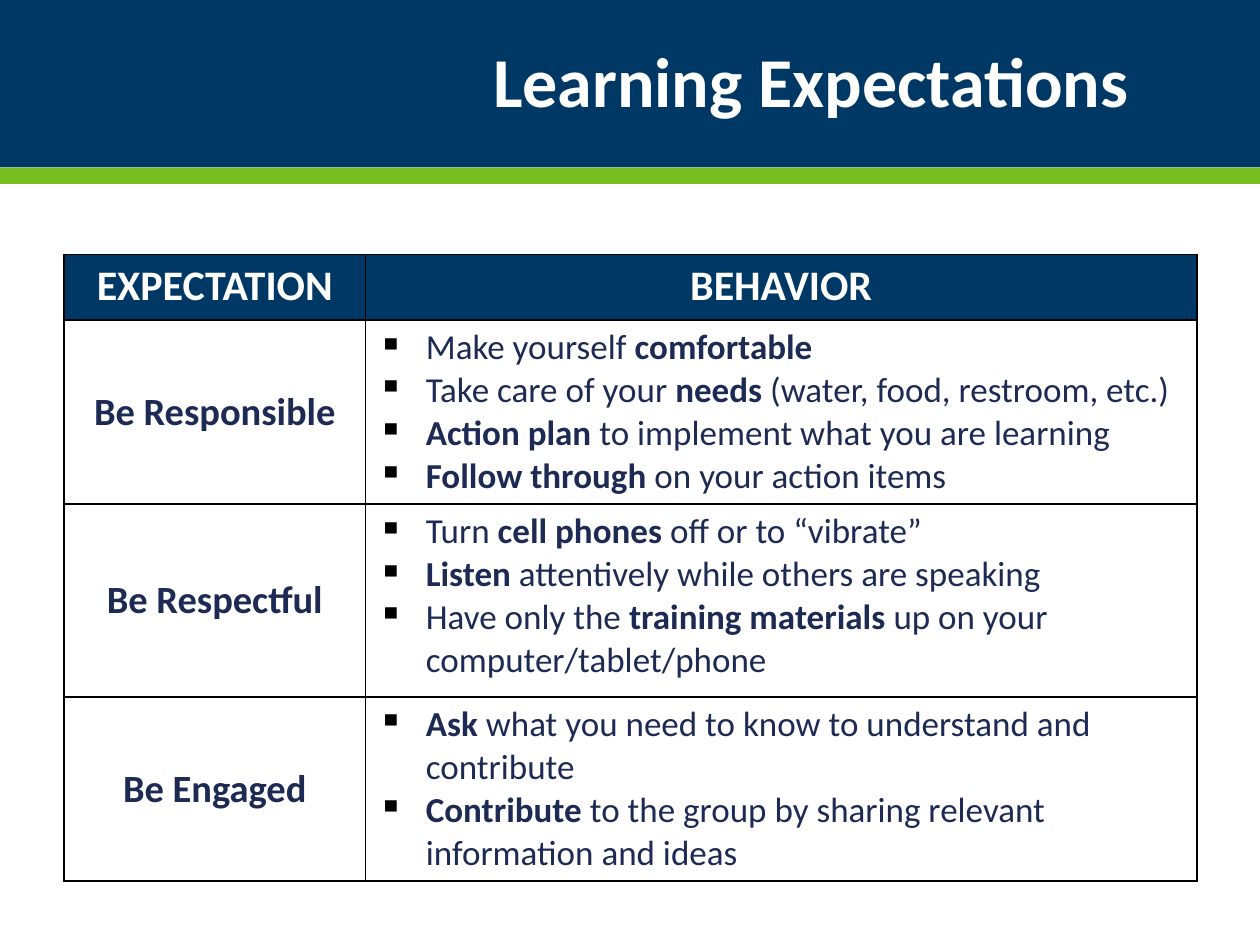
from dataclasses import dataclass
from lxml.etree import SubElement as Sub
from pptx import Presentation
from pptx.dml.color import RGBColor as Rgb
from pptx.enum.shapes import MSO_SHAPE as Shape
from pptx.enum.text import MSO_ANCHOR as Anchor, PP_ALIGN as Align
from pptx.oxml.ns import qn
from pptx.util import Emu, Pt

SCALE = 9144


def px(n):
    return Emu(n * SCALE)


@dataclass(frozen=True)
class Theme:
    font: str = "Calibri"
    navy: str = "003865"
    green: str = "78BE21"
    ink: str = "1D2A53"
    white: str = "FFFFFF"
    black: str = "000000"
    title: int = 40
    head: int = 24
    label: int = 22
    body: int = 20


class Deck:
    def __init__(self, theme, wide, high):
        self.theme = theme
        self.file = Presentation()
        self.file.slide_width, self.file.slide_height = px(wide), px(high)
        self.slide = self.file.slides.add_slide(self.file.slide_layouts[6])

    def band(self, top, wide, high, color):
        bar = self.slide.shapes.add_shape(
            Shape.RECTANGLE, 0, px(top), px(wide), px(high))
        bar.shadow.inherit = False
        bar.fill.solid()
        bar.fill.fore_color.rgb = Rgb.from_string(color)
        bar.line.fill.background()

    def style(self, para, size, color, bold=None):
        font = para.font
        font.name, font.size, font.bold = self.theme.font, Pt(size), bold
        font.color.rgb = Rgb.from_string(color)

    def title(self, text, left, top, wide, high):
        box = self.slide.shapes.add_textbox(*map(px, (left, top, wide, high)))
        frame = box.text_frame
        frame.word_wrap = True
        frame.vertical_anchor = Anchor.MIDDLE
        para = frame.paragraphs[0]
        para.text = text
        para.alignment = Align.CENTER
        para.line_spacing = 0.9
        self.style(para, self.theme.title, self.theme.white, True)

    def border(self, cell):
        props = cell._tc.get_or_add_tcPr()
        for side in "LRTB":
            line = Sub(props, qn(f"a:ln{side}"), w=str(Pt(1)))
            fill = Sub(line, qn("a:solidFill"))
            Sub(fill, qn("a:srgbClr"), val=self.theme.black)

    def paint(self, cell, color):
        self.border(cell)
        cell.fill.solid()
        cell.fill.fore_color.rgb = Rgb.from_string(color)

    def label(self, cell, text, size, color, fill, anchor):
        self.paint(cell, fill)
        cell.vertical_anchor = anchor
        para = cell.text_frame.paragraphs[0]
        para.text = text
        para.alignment = Align.CENTER
        self.style(para, size, color, True)

    def bullets(self, cell, items):
        self.paint(cell, self.theme.white)
        frame = cell.text_frame
        for i, item in enumerate(items):
            para = frame.add_paragraph() if i else frame.paragraphs[0]
            props = para._p.get_or_add_pPr()
            props.set("marL", str(px(38)))
            props.set("indent", str(px(-38)))
            tint = Sub(props, qn("a:buClr"))
            Sub(tint, qn("a:srgbClr"), val=self.theme.black)
            Sub(props, qn("a:buChar"), char="▪")
            self.style(para, self.theme.body, self.theme.ink)
            for j, part in enumerate(item.split("*")):
                if part:
                    run = para.add_run()
                    run.text = part
                    run.font.bold = j % 2 == 1

    def table(self, left, top, cols, rows, heads, body):
        look = self.theme
        grid = self.slide.shapes.add_table(
            len(rows), len(cols), px(left), px(top),
            px(sum(cols)), px(sum(rows))).table
        grid.first_row = grid.horz_banding = False
        for col, wide in zip(grid.columns, cols):
            col.width = px(wide)
        for row, high in zip(grid.rows, rows):
            row.height = px(high)
        for i, head in enumerate(heads):
            self.label(grid.cell(0, i), head, look.head, look.white,
                       look.navy, Anchor.TOP)
        for i, (name, items) in enumerate(body, 1):
            self.label(grid.cell(i, 0), name, look.label, look.ink,
                       look.white, Anchor.MIDDLE)
            self.bullets(grid.cell(i, 1), items)


HEADS = ["EXPECTATION", "BEHAVIOR"]
BODY = [
    ("Be Responsible", [
        "Make yourself *comfortable*",
        "Take care of your *needs* (water, food, restroom, etc.)",
        "*Action plan *to implement what you are learning",
        "*Follow through *on your action items",
    ]),
    ("Be Respectful", [
        "Turn *cell phones* off or to “vibrate”",
        "*Listen *attentively while others are speaking",
        "Have only the *training materials *up on your computer/tablet/phone",
    ]),
    ("Be Engaged", [
        "*Ask* what you need to know to understand and contribute",
        "*Contribute *to the group by sharing relevant information and ideas",
    ]),
]


def main():
    theme = Theme()
    deck = Deck(theme, 1000, 750)
    deck.band(0, 1000, 133, theme.navy)
    deck.band(133, 1000, 13, theme.green)
    deck.table(51, 202, [239, 660], [52, 137, 153, 137], HEADS, BODY)
    deck.title("Learning Expectations", 275, 17, 737, 100)
    deck.file.save("out.pptx")


if __name__ == "__main__":
    main()
